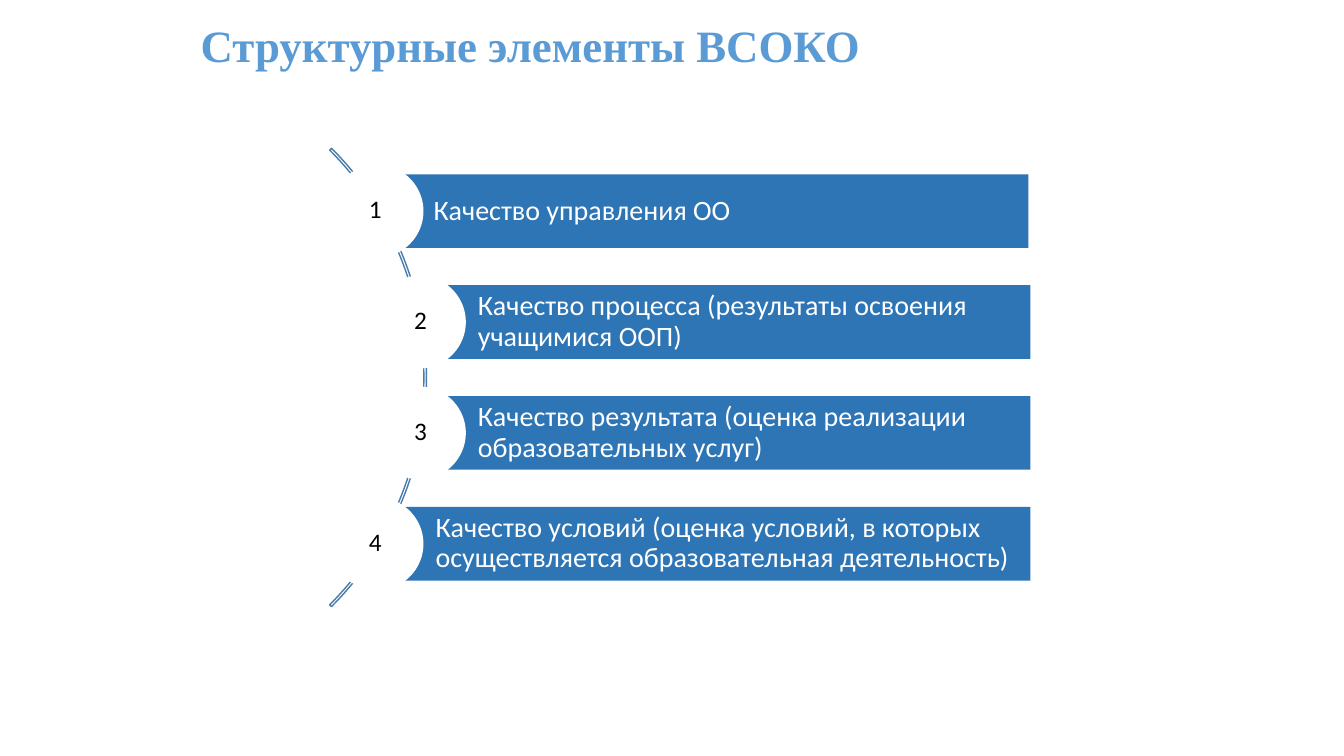
from dataclasses import dataclass

import pptx
import pptx.dml.color
import pptx.enum.shapes
import pptx.enum.text
import pptx.util

Inches = pptx.util.Inches
Shape = pptx.enum.shapes.MSO_SHAPE
Anchor = pptx.enum.text.MSO_ANCHOR
Align = pptx.enum.text.PP_ALIGN


@dataclass(frozen=True)
class Theme:
    title_color: str = "5B9BD5"
    bar_color: str = "2E75B6"
    arc_color: str = "497CAB"
    light: str = "FFFFFF"
    dark: str = "000000"
    title_font: str = "Times New Roman"
    body_font: str = "Calibri"
    title_size: int = 32
    bar_size: int = 20
    number_size: int = 18


THEME = Theme()

# Bar left, bar width, disc left, number left, text
ELEMENTS = [
    (3.72, 6.48, 3.28, 3.56, "Качество управления ОО"),
    (4.16, 6.06, 3.70, 4.01, "Качество процесса (результаты освоения учащимися ООП)"),
    (4.16, 6.06, 3.70, 4.01, "Качество результата (оценка реализации образовательных услуг)"),
    (3.74, 6.48, 3.28, 3.56,
     "Качество условий (оценка условий, в которых осуществляется образовательная деятельность)"),
]
FIRST_TOP = 1.73
PITCH = 1.1
BAR_HEIGHT = 0.73
DISC_SIZE = 0.92


def rgb(color):
    return pptx.dml.color.RGBColor.from_string(color)


def write(frame, text, font_name, size, color, bold=False, line_spacing=None):
    para = frame.paragraphs[0]
    para.text = text
    para.alignment = Align.LEFT
    para.line_spacing = line_spacing
    para.font.name = font_name
    para.font.size = pptx.util.Pt(size)
    para.font.color.rgb = rgb(color)
    para.font.bold = bold


def add_filled(page, kind, left, top, width, height, color):
    shape = page.shapes.add_shape(
        kind, Inches(left), Inches(top), Inches(width), Inches(height))
    shape.shadow.inherit = False
    shape.fill.solid()
    shape.fill.fore_color.rgb = rgb(color)
    shape.line.fill.background()
    return shape


def add_title(page, text):
    title = page.shapes.title
    title.left, title.top = Inches(1.89), Inches(0.15)
    title.width, title.height = Inches(7.54), Inches(0.65)
    title.text_frame.vertical_anchor = Anchor.MIDDLE
    write(title.text_frame, text, THEME.title_font, THEME.title_size,
          THEME.title_color, bold=True, line_spacing=0.9)


def add_arc(page):
    """Draw the thin arc that runs behind the bars."""
    arc = page.shapes.add_shape(
        Shape.BLOCK_ARC, Inches(-2.2), Inches(0.53), Inches(6.43), Inches(6.43))
    arc.shadow.inherit = False
    for index, value in enumerate((189, 27, 0.004)):
        arc.adjustments[index] = value
    arc.fill.background()
    arc.line.color.rgb = rgb(THEME.arc_color)
    arc.line.width = pptx.util.Pt(1)


def add_bar(page, left, top, width, text):
    bar = add_filled(page, Shape.RECTANGLE, left, top, width, BAR_HEIGHT,
                     THEME.bar_color)
    frame = bar.text_frame
    frame.word_wrap = True
    frame.vertical_anchor = Anchor.MIDDLE
    frame.margin_left = Inches(0.58)
    frame.margin_top = frame.margin_right = frame.margin_bottom = Inches(0.06)
    write(frame, text, THEME.body_font, THEME.bar_size, THEME.light,
          line_spacing=0.9)


def add_number(page, left, top, number):
    box = page.shapes.add_textbox(
        Inches(left), Inches(top), Inches(0.31), Inches(0.4))
    box.text_frame.word_wrap = False
    box.text_frame.auto_size = pptx.enum.text.MSO_AUTO_SIZE.SHAPE_TO_FIT_TEXT
    write(box.text_frame, str(number), THEME.body_font, THEME.number_size,
          THEME.dark)


def main():
    deck = pptx.Presentation()
    deck.slide_width, deck.slide_height = Inches(13.33), Inches(7.5)
    page = deck.slides.add_slide(deck.slide_layouts.get_by_name("Title Only"))
    add_title(page, "Структурные элементы ВСОКО")
    add_arc(page)
    for index, (bar_left, width, disc_left, number_left, text) in enumerate(ELEMENTS):
        top = FIRST_TOP + index * PITCH
        add_bar(page, bar_left, top, width, text)
        add_filled(page, Shape.OVAL, disc_left, top + (BAR_HEIGHT - DISC_SIZE) / 2,
                   DISC_SIZE, DISC_SIZE, THEME.light)
        add_number(page, number_left, top + 0.14, index + 1)
    deck.save("out.pptx")


if __name__ == "__main__":
    main()
